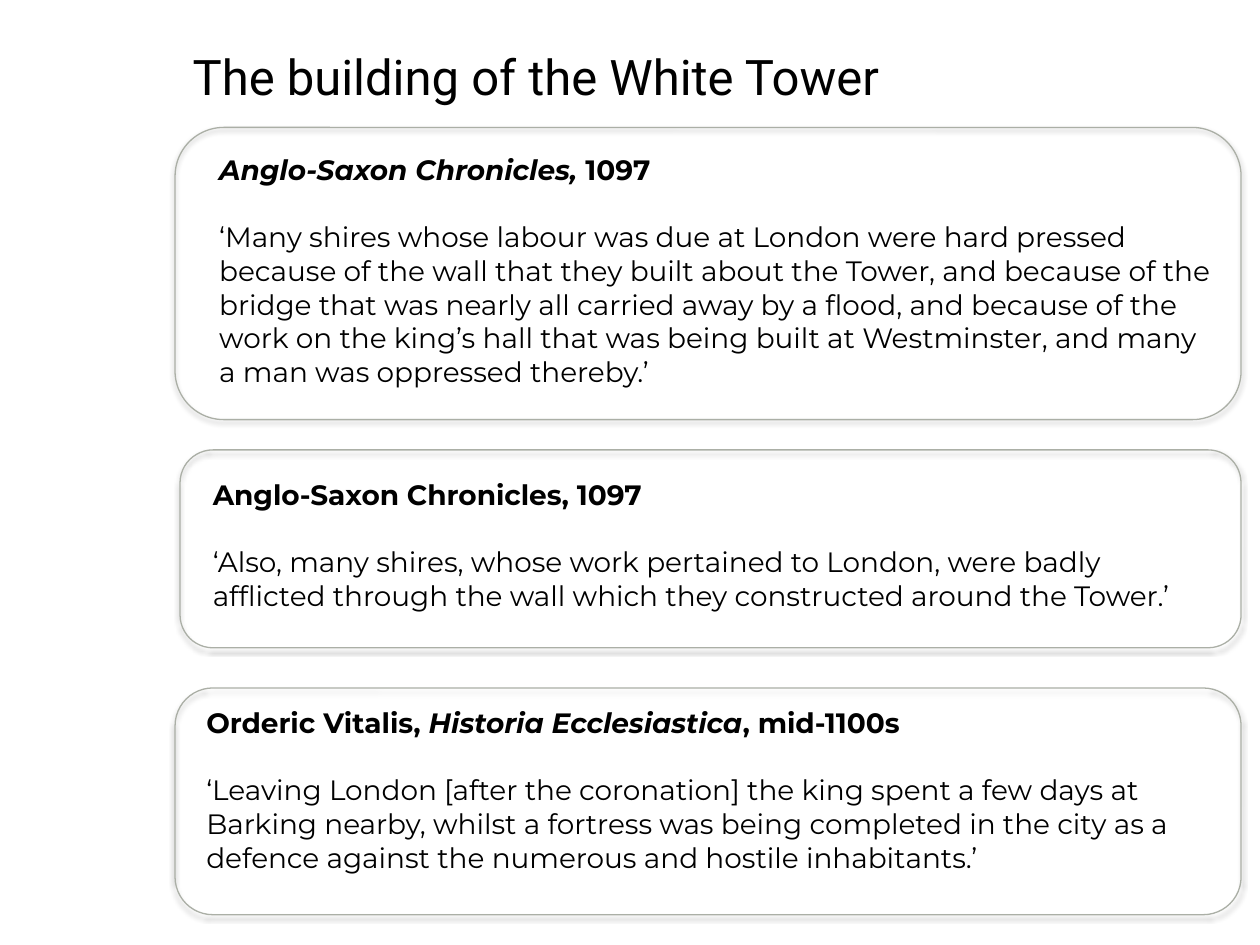
from dataclasses import dataclass

from lxml.etree import SubElement
from pptx import Presentation
from pptx.dml.color import RGBColor
from pptx.enum.shapes import MSO_SHAPE as Shape
from pptx.enum.text import MSO_ANCHOR as Anchor, MSO_AUTO_SIZE as AutoSize, PP_ALIGN as Align
from pptx.oxml.ns import qn
from pptx.slide import Slide
from pptx.text.text import TextFrame, _Paragraph as Paragraph
from pptx.util import Cm, Pt


@dataclass(frozen=True)
class Theme:
    """Colours, fonts and sizes of the slide."""
    ink: RGBColor = RGBColor(0x00, 0x00, 0x00)
    outline: RGBColor = RGBColor(0xAB, 0xAF, 0xA6)
    title_font: str = "Roboto"
    body_font: str = "Montserrat"
    title_size: float = 28
    body_size: float = 16
    quote_gap: float = 19.3


@dataclass(frozen=True)
class Box:
    """A rectangle in centimetres."""
    left: float
    top: float
    width: float
    height: float

    def lengths(self) -> tuple[Cm, ...]:
        """Return left, top, width and height as lengths."""
        return tuple(Cm(v) for v in (self.left, self.top, self.width, self.height))


@dataclass(frozen=True)
class Source:
    """A quoted chronicle: its frame, its text area, heading runs and quotation."""
    frame: Box
    area: Box
    heading: tuple[tuple[str, bool], ...]
    quote: str


THEME = Theme()
TITLE_BOX = Box(3.63, 0.81, 21.08, 1.45)
SOURCES = (
    Source(
        Box(3.53, 2.57, 21.49, 5.89), Box(4.17, 2.95, 20.52, 5.05),
        (("Anglo-Saxon Chronicles, ", True), ("1097", False)),
        "‘Many shires whose labour was due at London were hard pressed because of the wall "
        "that they built about the Tower, and because of the bridge that was nearly all "
        "carried away by a flood, and because of the work on the king’s hall that was being "
        "built at Westminster, and many a man was oppressed thereby.’",
    ),
    Source(
        Box(3.63, 9.07, 21.39, 3.99), Box(4.04, 9.5, 20.8, 3),
        (("Anglo-Saxon Chronicles, 1097", False),),
        "‘Also, many shires, whose work pertained to London, were badly afflicted through "
        "the wall which they constructed around the Tower.’",
    ),
    Source(
        Box(3.53, 13.87, 21.49, 4.57), Box(3.91, 14.1, 21.08, 3.68),
        (("Orderic Vitalis, ", False), ("Historia Ecclesiastica", True), (", mid-1100s", False)),
        "‘Leaving London [after the coronation] the king spent a few days at Barking nearby, "
        "whilst a fortress was being completed in the city as a defence against the numerous "
        "and hostile inhabitants.’",
    ),
)


def add_text(p: Paragraph, text: str, *, font: str = THEME.body_font,
             size: float = THEME.body_size, bold: bool = False, italic: bool = False) -> None:
    """Append a formatted run to a paragraph."""
    r = p.add_run()
    r.text = text
    r.font.name, r.font.size = font, Pt(size)
    r.font.bold, r.font.italic = bold, italic
    r.font.color.rgb = THEME.ink


def prepare(tf: TextFrame) -> Paragraph:
    """Set wrapping and top anchoring, and return the first paragraph."""
    tf.word_wrap = True
    tf.auto_size = AutoSize.NONE
    tf.vertical_anchor = Anchor.TOP
    p = tf.paragraphs[0]
    p.alignment = Align.LEFT
    return p


def add_title(s: Slide, text: str) -> None:
    """Place and fill the title placeholder."""
    sp = s.shapes.title
    sp.left, sp.top, sp.width, sp.height = TITLE_BOX.lengths()
    add_text(prepare(sp.text_frame), text, font=THEME.title_font, size=THEME.title_size)


def add_frame(s: Slide, box: Box) -> None:
    """Draw an unfilled rounded frame with a soft shadow below it."""
    sp = s.shapes.add_shape(Shape.ROUNDED_RECTANGLE, *box.lengths())
    sp.fill.background()
    sp.line.color.rgb = THEME.outline
    sp.line.width = Pt(0.75)
    sp.shadow.inherit = False
    effects = sp._element.spPr.find(qn("a:effectLst"))
    shadow = SubElement(effects, qn("a:outerShdw"), blurRad=str(Pt(3.1)),
                        dist=str(Pt(1.8)), dir="5400000", rotWithShape="0")
    color = SubElement(shadow, qn("a:srgbClr"), val=str(THEME.ink))
    SubElement(color, qn("a:alpha"), val="35000")


def add_source(s: Slide, source: Source) -> None:
    """Draw one framed source with its heading and quotation."""
    add_frame(s, source.frame)
    tf = s.shapes.add_textbox(*source.area.lengths()).text_frame
    p = prepare(tf)
    for text, italic in source.heading:
        add_text(p, text, bold=True, italic=italic)
    p = tf.add_paragraph()
    p.space_before = Pt(THEME.quote_gap)
    add_text(p, source.quote)


def main() -> None:
    """Build and save the slide."""
    prs = Presentation()
    prs.slide_width, prs.slide_height = Cm(25.4), Cm(19.05)
    s = prs.slides.add_slide(prs.slide_layouts.get_by_name("Title Only"))
    add_title(s, "The building of the White Tower")
    for source in SOURCES:
        add_source(s, source)
    prs.save("out.pptx")


if __name__ == "__main__":
    main()
